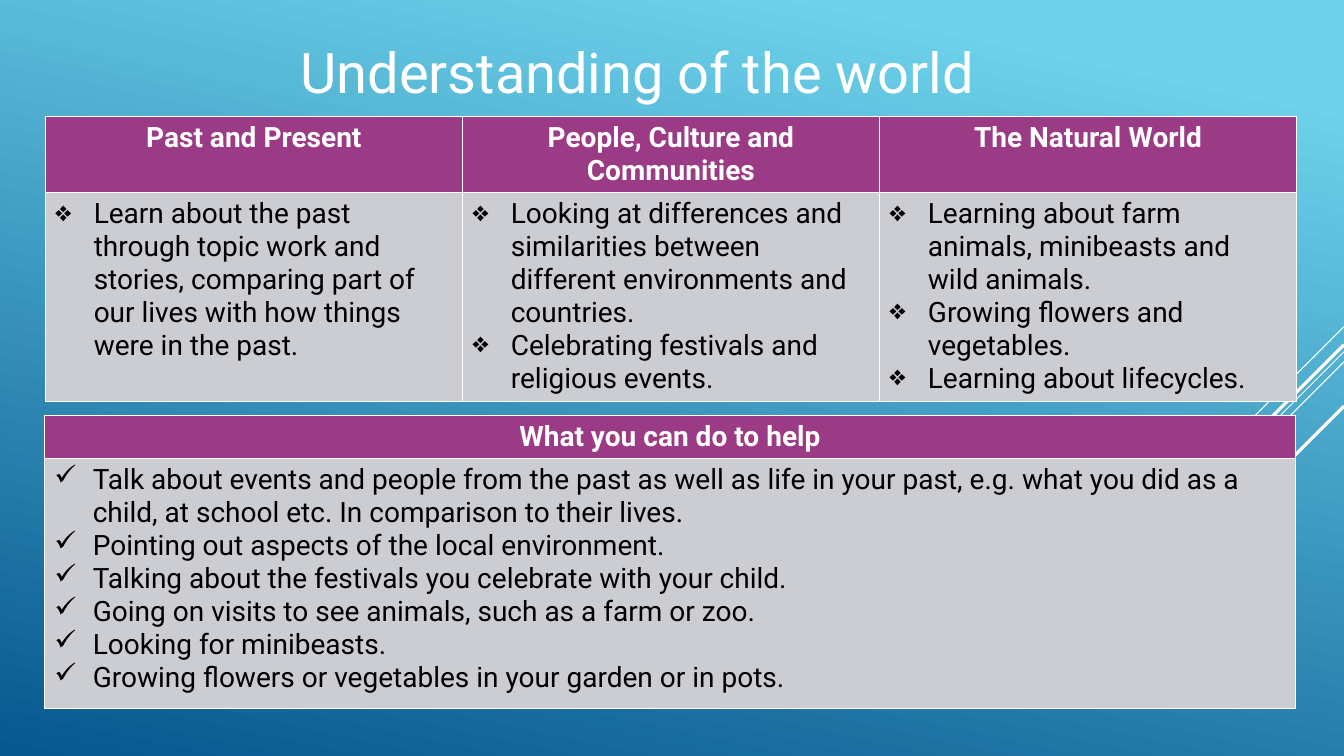
from dataclasses import dataclass

from lxml.etree import SubElement
from pptx import Presentation
from pptx.dml.color import RGBColor
from pptx.enum.shapes import MSO_CONNECTOR
from pptx.enum.text import MSO_ANCHOR, PP_ALIGN
from pptx.oxml import parse_xml
from pptx.oxml.ns import nsdecls, qn
from pptx.slide import Slide
from pptx.table import _Cell
from pptx.text.text import _Paragraph
from pptx.util import Inches, Pt

FONT = "Roboto"
WHITE, BLACK = "FFFFFF", "000000"
PURPLE, GREY = "9C3B85", "CCCDD2"
SKY, DEEP_BLUE = "6ED2EB", "06588E"
SLIDE_WIDTH, SLIDE_HEIGHT = 13.33, 7.5
TABLE_WIDTH = 12.41
INDENT = 0.38


@dataclass
class Ray:
    """A diagonal line running down at 45 degrees from the right edge."""
    top: float
    reach: float
    weight: float


@dataclass
class Topic:
    heading: str
    points: list[str]


@dataclass
class TopicTable:
    left: float
    top: float
    header_height: float
    body_height: float
    bullet: str
    topics: list[Topic]


RAYS = [
    Ray(3.24, 1.0, 0.75),
    Ray(3.49, 3.26, 0.75),
    Ray(3.59, 2.07, 0.75),
    Ray(3.42, 1.91, 2.25),
    Ray(4.03, 1.39, 2.25),
]

HELP = TopicTable(0.44, 4.12, 0.43, 2.48, "✓", [
    Topic("What you can do to help", [
        "Talk about events and people from the past as well as life in your past, "
        "e.g. what you did as a child, at school etc. In comparison to their lives.",
        "Pointing out aspects of the local environment.",
        "Talking about the festivals you celebrate with your child.",
        "Going on visits to see animals, such as a farm or zoo.",
        "Looking for minibeasts.",
        "Growing flowers or vegetables in your garden or in pots.",
    ]),
])

LEARNING = TopicTable(0.45, 1.16, 0.75, 2.07, "❖", [
    Topic("Past and Present", [
        "Learn about the past through topic work and stories, comparing part of "
        "our lives with how things were in the past.",
    ]),
    Topic("People, Culture and Communities", [
        "Looking at differences and similarities between different environments "
        "and countries.",
        "Celebrating festivals and religious events.",
    ]),
    Topic("The Natural World", [
        "Learning about farm animals, minibeasts and wild animals.",
        "Growing flowers and vegetables.",
        "Learning about lifecycles.",
    ]),
]) 


def rgb(hex_colour: str) -> RGBColor:
    return RGBColor.from_string(hex_colour)


def format_runs(paragraph: _Paragraph, size: float, colour: str, bold: bool = False) -> None:
    for run in paragraph.runs:
        run.font.name = FONT
        run.font.size = Pt(size)
        run.font.bold = bold
        run.font.color.rgb = rgb(colour)


def add_bullet(paragraph: _Paragraph, symbol: str) -> None:
    properties = paragraph._p.get_or_add_pPr()
    properties.set("marL", str(Inches(INDENT)))
    properties.set("indent", str(-Inches(INDENT)))
    SubElement(properties, qn("a:buChar")).set("char", symbol)


def style_cell(cell: _Cell, fill: str) -> None:
    cell.fill.solid()
    cell.fill.fore_color.rgb = rgb(fill)
    # Borders come before the fill in the cell properties
    for position, side in enumerate(("lnL", "lnR", "lnT", "lnB")):
        border = parse_xml(
            f'<a:{side} {nsdecls("a")} w="{Pt(0.75)}"><a:solidFill>'
            f'<a:srgbClr val="{WHITE}"/></a:solidFill></a:{side}>'
        )
        cell._tc.get_or_add_tcPr().insert(position, border)


def paint_background(slide: Slide) -> None:
    fill = slide.background.fill
    fill.gradient()
    fill.gradient_angle = 258
    for stop, position, colour in zip(fill.gradient_stops, (0.1, 1.0), (SKY, DEEP_BLUE)):
        stop.position = position
        stop.color.rgb = rgb(colour)


def draw_ray(slide: Slide, ray: Ray) -> None:
    line = slide.shapes.add_connector(
        MSO_CONNECTOR.STRAIGHT,
        Inches(SLIDE_WIDTH), Inches(ray.top),
        Inches(SLIDE_WIDTH - ray.reach), Inches(ray.top + ray.reach),
    )
    line.line.color.rgb = rgb(WHITE)
    line.line.width = Pt(ray.weight)
    SubElement(line._element.spPr, qn("a:effectLst"))


def write_title(slide: Slide, text: str) -> None:
    title = slide.shapes.title
    title.left, title.top = Inches(0.82), Inches(0.19)
    title.width, title.height = Inches(11), Inches(1.03)
    title.text_frame.text = text
    title.text_frame.vertical_anchor = MSO_ANCHOR.MIDDLE
    heading = title.text_frame.paragraphs[0]
    heading.alignment = PP_ALIGN.CENTER
    format_runs(heading, 40, WHITE)


def draw_table(slide: Slide, spec: TopicTable) -> None:
    table = slide.shapes.add_table(
        2, len(spec.topics), Inches(spec.left), Inches(spec.top),
        Inches(TABLE_WIDTH), Inches(spec.header_height + spec.body_height),
    ).table
    table.horz_banding = False
    table.rows[0].height = Inches(spec.header_height)
    table.rows[1].height = Inches(spec.body_height)

    for column, topic in enumerate(spec.topics):
        header, body = table.cell(0, column), table.cell(1, column)
        style_cell(header, PURPLE)
        style_cell(body, GREY)

        header.text_frame.text = topic.heading
        heading = header.text_frame.paragraphs[0]
        heading.alignment = PP_ALIGN.CENTER
        format_runs(heading, 20, WHITE, bold=True)

        body.text_frame.text = "\n".join(topic.points)
        for point in body.text_frame.paragraphs:
            add_bullet(point, spec.bullet)
            format_runs(point, 20, BLACK)


def main() -> None:
    presentation = Presentation()
    presentation.slide_width = Inches(SLIDE_WIDTH)
    presentation.slide_height = Inches(SLIDE_HEIGHT)
    slide = presentation.slides.add_slide(presentation.slide_layouts[5])

    # Backdrop
    paint_background(slide)
    for ray in RAYS:
        draw_ray(slide, ray)

    # Content
    write_title(slide, "Understanding of the world")
    for topic_table in (HELP, LEARNING):
        draw_table(slide, topic_table)

    presentation.save("out.pptx")


if __name__ == "__main__":
    main()
